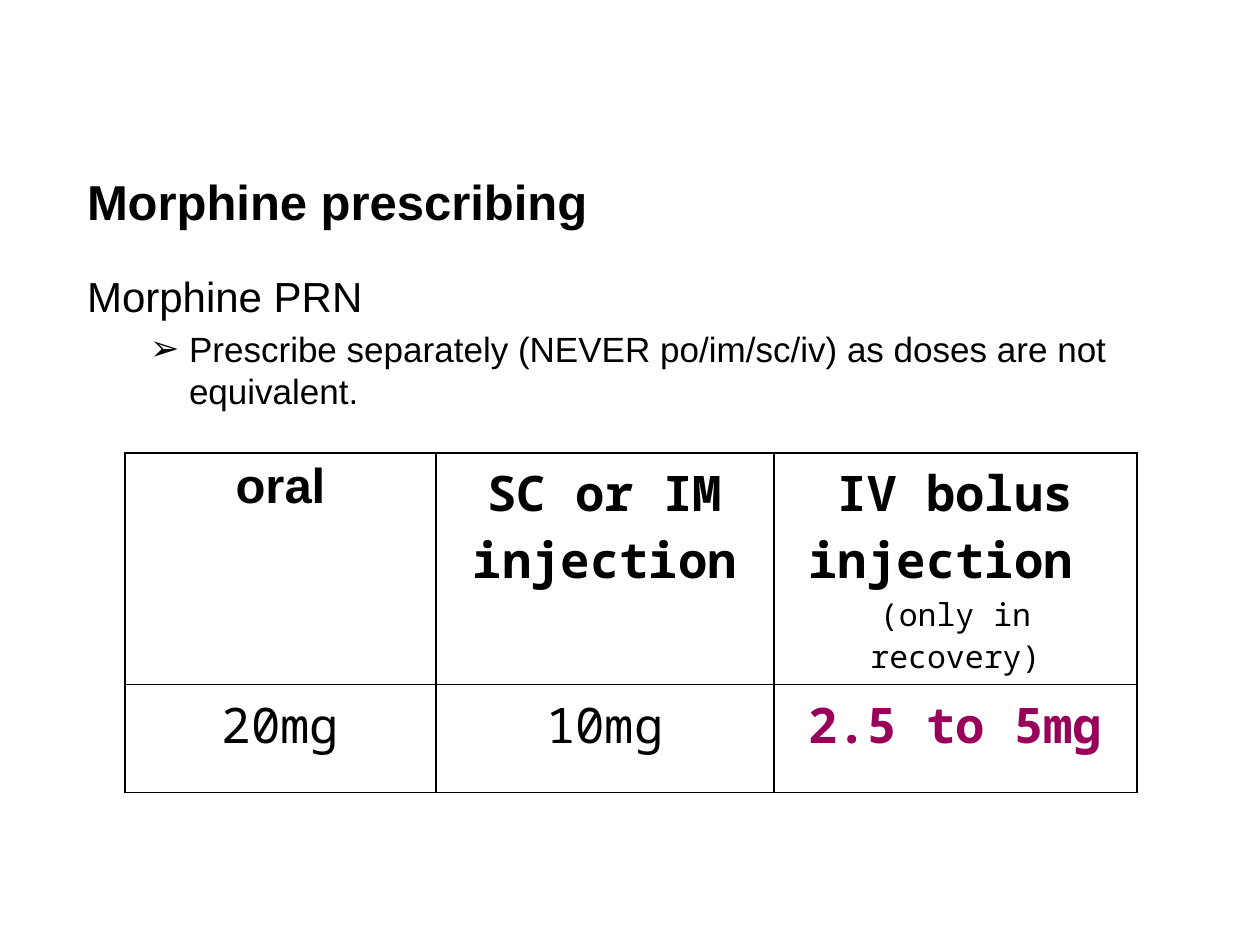
import pptx
import pptx.dml.color
import pptx.enum.text
import pptx.oxml
import pptx.oxml.ns
import pptx.util

PX = 914400 / 126
COLORS = {"text": "000000", "accent": "99005A", "paper": "FFFFFF", "border": "000000"}
SANS, MONO = "Arial", "Noto Sans Mono"
BORDER_WIDTH = pptx.util.Pt(1)
COLUMN_WIDTHS = (311, 338, 363)
ROW_HEIGHTS = (151, 108)

# Each cell is a list of paragraphs: text, font, size, bold, color
DOSES = (
    (
        [("oral", SANS, 28, True, "text")],
        [("SC or IM injection", MONO, 28, True, "text")],
        [
            ("IV bolus", MONO, 28, True, "text"),
            ("injection ", MONO, 28, True, "text"),
            ("(only in recovery)", MONO, 18, False, "text"),
        ],
    ),
    (
        [("20mg", MONO, 28, False, "text")],
        [("10mg", MONO, 28, False, "text")],
        [("2.5 to 5mg", MONO, 28, True, "accent")],
    ),
)


def px(length):
    return pptx.util.Emu(round(length * PX))


def rgb(name):
    return pptx.dml.color.RGBColor.from_string(COLORS[name])


def add_run(paragraph, text, font, size, bold=False, color="text"):
    run = paragraph.add_run()
    run.text = text
    run.font.name = font
    run.font.size = pptx.util.Pt(size)
    run.font.bold = bold
    run.font.color.rgb = rgb(color)


def set_bullet(paragraph, left, indent, character=None):
    """Set the indents in px, and a bullet character or none."""
    properties = paragraph._p.get_or_add_pPr()
    properties.set("marL", str(px(left)))
    properties.set("indent", str(px(indent)))
    tag = "a:buChar" if character else "a:buNone"
    bullet = pptx.oxml.parse_xml(f"<{tag} {pptx.oxml.ns.nsdecls('a')}/>")
    if character:
        bullet.set("char", character)
    properties.append(bullet)


def place_text(shape, box):
    """Move a placeholder to box and return its bare text frame."""
    shape.left, shape.top, shape.width, shape.height = map(px, box)
    frame = shape.text_frame
    frame.margin_left = frame.margin_top = frame.margin_right = frame.margin_bottom = 0
    frame.vertical_anchor = pptx.enum.text.MSO_ANCHOR.TOP
    frame.auto_size = pptx.enum.text.MSO_AUTO_SIZE.NONE
    frame.word_wrap = True
    return frame


def fill_title(shape, box):
    paragraph = place_text(shape, box).paragraphs[0]
    paragraph.alignment = pptx.enum.text.PP_ALIGN.LEFT
    add_run(paragraph, "Morphine prescribing", SANS, 28, bold=True)


def fill_body(shape, box):
    frame = place_text(shape, box)
    heading = frame.paragraphs[0]
    set_bullet(heading, 0, 0)
    heading.space_before = pptx.util.Pt(0)
    add_run(heading, "Morphine PRN", SANS, 24)
    advice = frame.add_paragraph()
    advice.level = 1
    set_bullet(advice, 102, -39, "➢")
    advice.space_before = pptx.util.Pt(4)
    add_run(advice, "Prescribe separately (NEVER po/im/sc/iv) as doses are not equivalent.", SANS, 20)


def style_cell(cell):
    properties = cell._tc.get_or_add_tcPr()
    for side in ("lnL", "lnR", "lnT", "lnB"):
        properties.append(pptx.oxml.parse_xml(
            f'<a:{side} {pptx.oxml.ns.nsdecls("a")} w="{BORDER_WIDTH}"><a:solidFill>'
            f'<a:srgbClr val="{COLORS["border"]}"/></a:solidFill></a:{side}>'
        ))
    cell.fill.solid()
    cell.fill.fore_color.rgb = rgb("paper")


def add_dose_table(slide, left, top):
    table = slide.shapes.add_table(
        len(ROW_HEIGHTS), len(COLUMN_WIDTHS), px(left), px(top),
        px(sum(COLUMN_WIDTHS)), px(sum(ROW_HEIGHTS)),
    ).table
    table.first_row = table.horz_banding = False
    for column, width in zip(table.columns, COLUMN_WIDTHS):
        column.width = px(width)
    for row, height, contents in zip(table.rows, ROW_HEIGHTS, DOSES):
        row.height = px(height)
        for cell, lines in zip(row.cells, contents):
            style_cell(cell)
            frame = cell.text_frame
            for index, line in enumerate(lines):
                paragraph = frame.add_paragraph() if index else frame.paragraphs[0]
                paragraph.alignment = pptx.enum.text.PP_ALIGN.CENTER
                add_run(paragraph, *line)


def main():
    presentation = pptx.Presentation()
    presentation.slide_width, presentation.slide_height = px(1260), px(945)
    slide = presentation.slides.add_slide(presentation.slide_layouts[1])
    fill_title(slide.shapes.title, (87, 171, 1086, 59))
    fill_body(slide.placeholders[1], (87, 270, 1086, 144))
    add_dose_table(slide, 125, 453)
    presentation.save("out.pptx")


if __name__ == "__main__":
    main()
